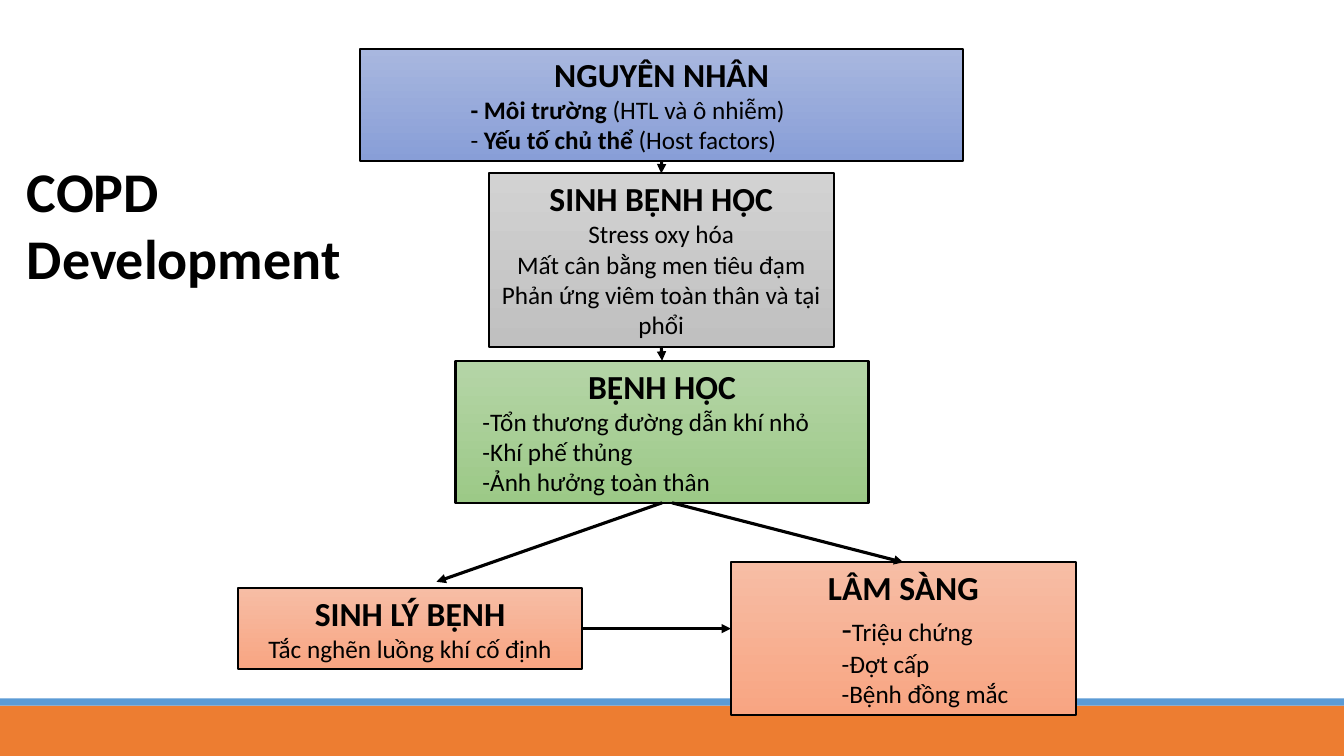
"""Build the COPD development flow slide."""
from lxml.etree import SubElement
from pptx import Presentation
from pptx.dml.color import RGBColor
from pptx.enum.shapes import MSO_CONNECTOR, MSO_SHAPE
from pptx.enum.text import MSO_ANCHOR, MSO_AUTO_SIZE, PP_ALIGN
from pptx.oxml.ns import qn
from pptx.util import Cm, Pt

WIDE, HIGH = 33.87, 19.05
TITLE = ["COPD", "Development"]
TITLE_AT = (0.43, 3.81, 10.16, 3.68)
BANDS = [("orange", 17.78, 1.27), ("blue", 17.6, 0.18)]

BOXES = {
    "cause": dict(
        at=(9.07, 1.24, 15.21, 2.82), tint="sky", head="NGUYÊN NHÂN", indent=2.54,
        rows=[[("- Môi trường ", "strong"), ("(HTL và ô nhiễm)", "body")],
              [("- ", "body"), ("Yếu tố chủ thể ", "strong"), ("(Host factors)", "body")]]),
    "process": dict(
        at=(12.32, 4.37, 8.69, 4.37), tint="grey", head="SINH BỆNH HỌC", indent=None,
        rows=[[("Stress oxy hóa", "body")],
              [("Mất cân bằng men tiêu đạm", "body")],
              [("Phản ứng viêm toàn thân và tại phổi", "body")]]),
    "disease": dict(
        at=(11.48, 9.09, 10.41, 3.58), tint="green", head="BỆNH HỌC", indent=0.43,
        rows=[[("-Tổn thương đường dẫn khí nhỏ", "body")],
              [("-Khí phế thủng", "body")],
              [("-Ảnh hưởng toàn thân", "body")]]),
    "function": dict(
        at=(5.99, 14.81, 8.69, 2.06), tint="peach", head="SINH LÝ BỆNH", indent=None,
        rows=[[("Tắc nghẽn luồng khí cố định", "body")]]),
    "clinic": dict(
        at=(18.42, 14.17, 8.69, 3.84), tint="peach", head="LÂM SÀNG", indent=2.54,
        rows=[[("-", "dash"), ("Triệu chứng", "body")],
              [("-Đợt cấp", "body")],
              [("-Bệnh đồng mắc", "body")]]),
}

THEME = {
    "ink": "000000", "orange": "ED7D31", "blue": "5B9BD5",
    "sky": ("A8B7DF", "889ED7"), "grey": ("D2D2D2", "C0C0C0"),
    "green": ("B5D5A7", "9CC987"), "peach": ("F7BDA5", "F8A582"),
    "edge": Pt(1.5), "arrow": Pt(2.25),
    "title": dict(name="Calibri", size=Pt(40), bold=True),
    "head": dict(name="Calibri", size=Pt(24), bold=True),
    "dash": dict(name="Calibri", size=Pt(24), bold=False),
    "strong": dict(name="Calibri", size=Pt(18), bold=True),
    "body": dict(name="Calibri", size=Pt(18), bold=False),
}
FRAME = dict(word_wrap=True, vertical_anchor=MSO_ANCHOR.TOP,
             auto_size=MSO_AUTO_SIZE.SHAPE_TO_FIT_TEXT)


def tone(name):
    return RGBColor.from_string(name)


def apply(target, values):
    for key, value in values.items():
        setattr(target, key, value)


def write(frame, lines):
    apply(frame, FRAME)
    for n, (runs, indent) in enumerate(lines):
        para = frame.add_paragraph() if n else frame.paragraphs[0]
        para.alignment = PP_ALIGN.CENTER if indent is None else PP_ALIGN.LEFT
        if indent:
            para._p.get_or_add_pPr().set("marL", str(Cm(indent)))
        for text, style in runs:
            run = para.add_run()
            run.text = text
            apply(run.font, THEME[style])
            run.font.color.rgb = tone(THEME["ink"])


def block(slide, at):
    shape = slide.shapes.add_shape(MSO_SHAPE.RECTANGLE, *map(Cm, at))
    shape.shadow.inherit = False
    return shape


def band(slide, color, top, height):
    shape = block(slide, (0, top, WIDE, height))
    shape.fill.solid()
    shape.fill.fore_color.rgb = tone(THEME[color])
    shape.line.fill.background()


def box(slide, at, tint, head, indent, rows):
    shape = block(slide, at)
    shape.fill.gradient()
    shape.fill.gradient_angle = 270
    for stop, color in zip(shape.fill.gradient_stops, THEME[tint]):
        stop.color.rgb = tone(color)
    shape.line.color.rgb = tone(THEME["ink"])
    shape.line.width = THEME["edge"]
    write(shape.text_frame, [([(head, "head")], None)] + [(row, indent) for row in rows])


def arrow(slide, start, end):
    link = slide.shapes.add_connector(MSO_CONNECTOR.STRAIGHT, *map(Cm, start + end))
    link.line.color.rgb = tone(THEME["ink"])
    link.line.width = THEME["arrow"]
    SubElement(link.line._get_or_add_ln(), qn("a:tailEnd"), type="triangle")
    SubElement(link._element.spPr, qn("a:effectLst"))


def top(name):
    left, y, width, _ = BOXES[name]["at"]
    return left + width / 2, y


def foot(name, shift=0):
    left, y, width, height = BOXES[name]["at"]
    return left + width / 2 + shift, y + height


def main():
    deck = Presentation()
    deck.slide_width, deck.slide_height = Cm(WIDE), Cm(HIGH)
    slide = deck.slides.add_slide(deck.slide_layouts[6])
    for item in BANDS:
        band(slide, *item)
    title = slide.shapes.add_textbox(*map(Cm, TITLE_AT))
    write(title.text_frame, [([(text, "title")], 0) for text in TITLE])
    for item in BOXES.values():
        box(slide, **item)

    left, y, width, height = BOXES["function"]["at"]
    mid = y + height / 2
    arrow(slide, foot("cause"), top("process"))
    arrow(slide, foot("process"), top("disease"))
    arrow(slide, foot("disease"), (11, 14.66))
    arrow(slide, foot("disease", 0.25), top("clinic"))
    arrow(slide, (left + width, mid), (BOXES["clinic"]["at"][0], mid))
    deck.save("out.pptx")


if __name__ == "__main__":
    main()
